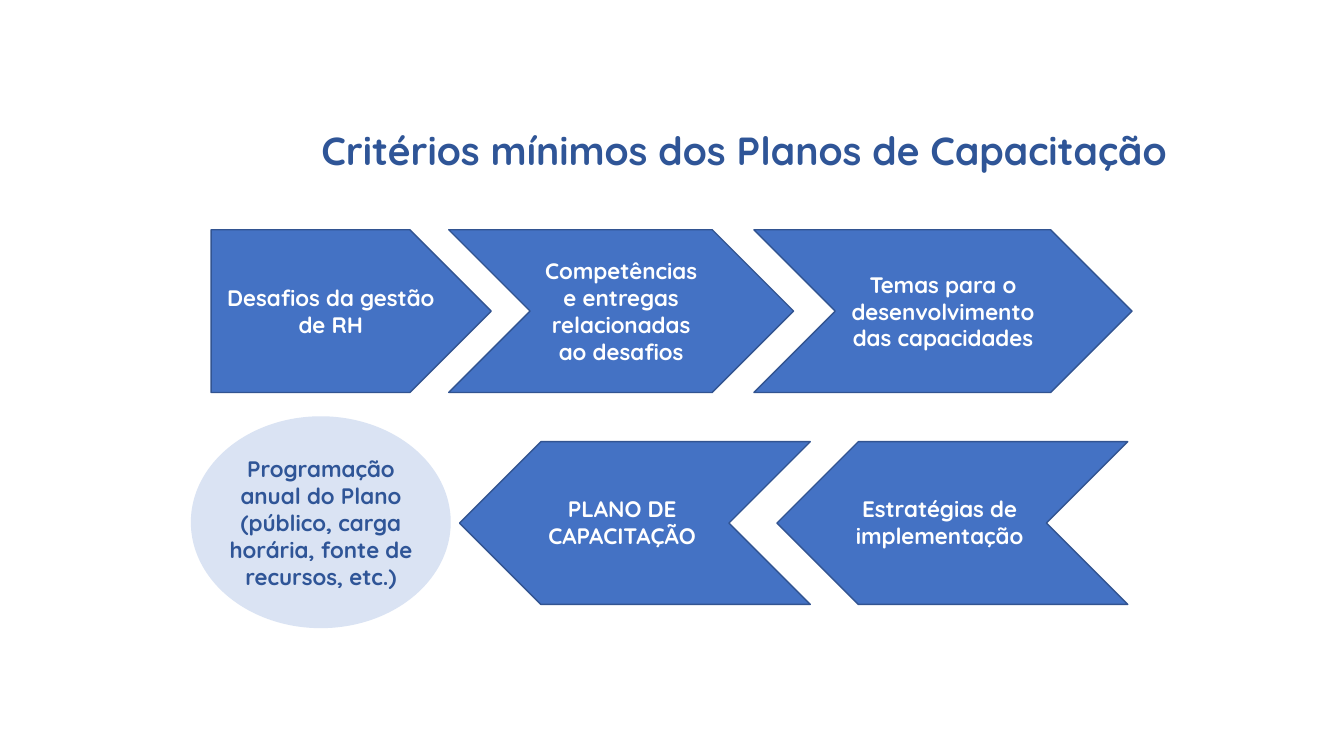
"""Build the slide on the minimum criteria of training plans."""
from pptx import Presentation
from pptx.dml.color import RGBColor
from pptx.enum.shapes import MSO_SHAPE as SHAPE
from pptx.enum.text import MSO_ANCHOR as ANCHOR, PP_ALIGN as ALIGN
from pptx.util import Cm, Pt

BLUE, EDGE, NAVY, PALE, WHITE = "4472C4", "325491", "2F5597", "DAE3F3", "FFFFFF"


def add_figure(kind, x, y, w, h, fill, line=None):
    sp = s.shapes.add_shape(kind, Cm(x), Cm(y), Cm(w), Cm(h))
    sp.shadow.inherit = False
    sp.fill.solid()
    sp.fill.fore_color.rgb = RGBColor.from_string(fill)
    if line:
        sp.line.color.rgb = RGBColor.from_string(line)
        sp.line.width = Pt(1)
    else:
        sp.line.fill.background()
    return sp


def write(sp, text, size=16, color=WHITE, align=ALIGN.CENTER, anchor=ANCHOR.MIDDLE):
    tf = sp.text_frame
    tf.word_wrap = True
    tf.vertical_anchor = anchor
    p = tf.paragraphs[0]
    p.alignment = align
    r = p.add_run()
    r.text = text
    r.font.name = "Quicksand"
    r.font.size = Pt(size)
    r.font.bold = True
    r.font.color.rgb = RGBColor.from_string(color)


prs = Presentation()
prs.slide_width, prs.slide_height = Cm(33.87), Cm(19.05)
s = prs.slides.add_slide(prs.slide_layouts[6])

title = s.shapes.add_textbox(Cm(4.83), Cm(3.07), Cm(24.82), Cm(1.45))
write(title, "Critérios mínimos dos Planos de Capacitação",
      size=28, color=NAVY, align=ALIGN.RIGHT, anchor=ANCHOR.TOP)

ARROW_H = 4.1
for kind, x, w, text in [
    (SHAPE.PENTAGON, 5.32, 7.06, "Desafios da gestão de RH"),
    (SHAPE.CHEVRON, 11.31, 8.69, "Competências e entregas relacionadas ao desafios"),
    (SHAPE.CHEVRON, 19.0, 9.53, "Temas para o desenvolvimento das capacidades"),
]:
    write(add_figure(kind, x, 5.79, w, ARROW_H, BLUE, EDGE), text)

for x, text in [(19.58, "Estratégias de implementação"), (11.58, "PLANO DE CAPACITAÇÃO")]:
    arrow = add_figure(SHAPE.CHEVRON, x, 11.13, 8.84, ARROW_H, BLUE, EDGE)
    arrow.rotation = 180
    label = s.shapes.add_textbox(Cm(x + 1.51), Cm(12.34), Cm(5.18), Cm(1.63))
    write(label, text)

add_figure(SHAPE.OVAL, 4.81, 10.49, 6.55, 5.34, PALE)
label = s.shapes.add_textbox(Cm(5.31), Cm(11.33), Cm(5.56), Cm(3.68))
write(label, "Programação anual do Plano (público, carga horária, fonte de recursos, etc.)",
      color=NAVY)

prs.save("out.pptx")
